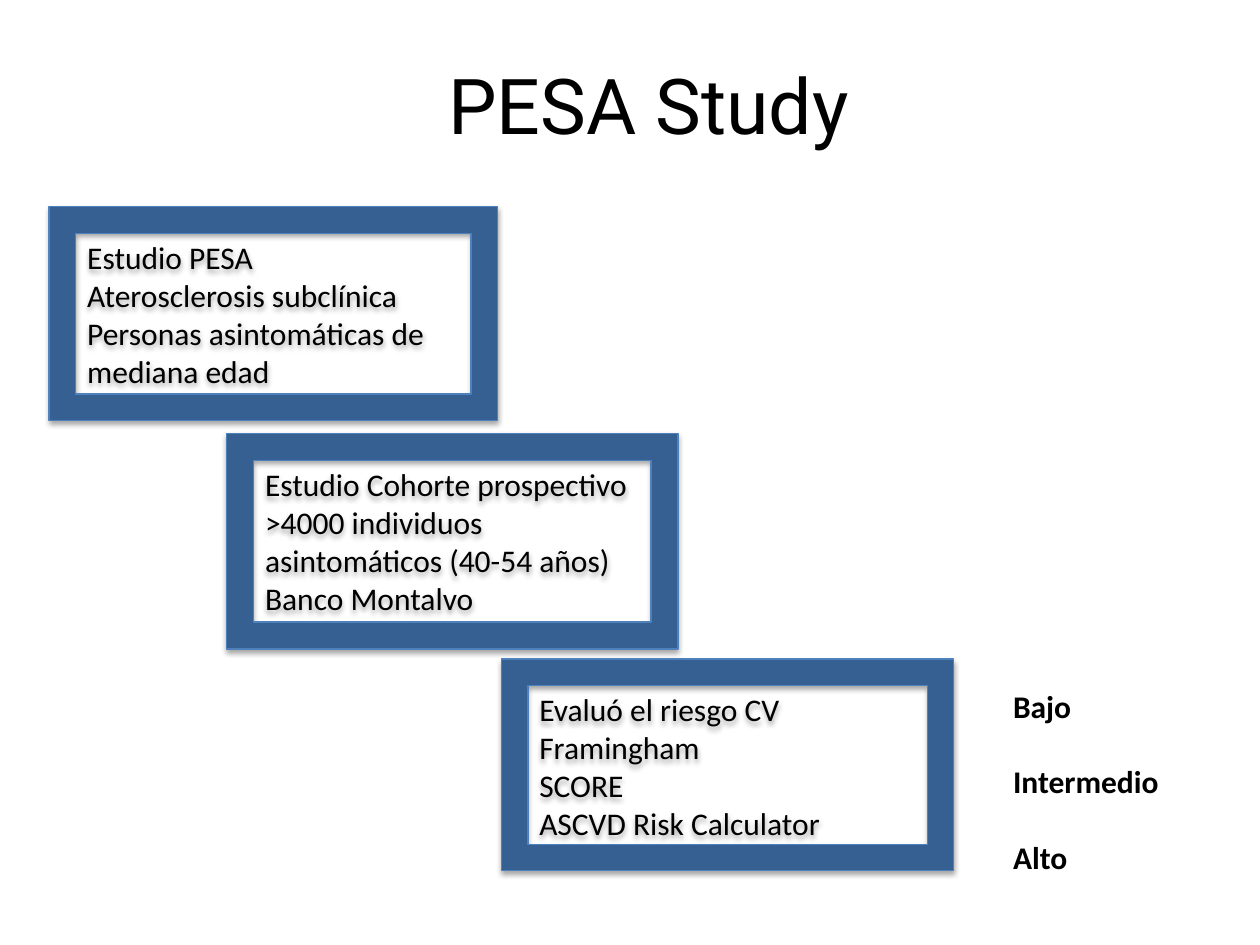
from lxml.etree import SubElement
from pptx import Presentation
from pptx.dml.color import RGBColor
from pptx.enum.shapes import MSO_SHAPE
from pptx.enum.text import MSO_ANCHOR, PP_ALIGN
from pptx.oxml.ns import qn
from pptx.util import Inches, Pt

BLACK = RGBColor(0x00, 0x00, 0x00)
FRAME_BLUE = RGBColor(0x37, 0x60, 0x92)
EDGE_BLUE = RGBColor(0x4F, 0x81, 0xBD)

presentation = Presentation()
presentation.slide_width = Inches(10)
presentation.slide_height = Inches(7.5)
COLUMN = presentation.slide_width / 100
ROW = presentation.slide_height / 75
slide = presentation.slides.add_slide(presentation.slide_layouts[6])

BODY_FONT = {"name": "Calibri", "size": Pt(18)}
BODY_FRAME = {
    "word_wrap": True,
    "vertical_anchor": MSO_ANCHOR.TOP,
    "margin_left": Inches(0.09),
    "margin_right": Inches(0.09),
    "margin_top": Inches(0.04),
    "margin_bottom": Inches(0.04),
}


def place(left, top, width, height):
    return int(left * COLUMN), int(top * ROW), int(width * COLUMN), int(height * ROW)


def write(shape, lines, frame_format, font_format, alignment=PP_ALIGN.LEFT, gap=0):
    text_frame = shape.text_frame
    for name, value in frame_format.items():
        setattr(text_frame, name, value)
    text_frame.text = "\n".join(lines)
    for index, paragraph in enumerate(text_frame.paragraphs):
        paragraph.alignment = alignment
        paragraph.space_before = Pt(gap if index else 0)
        font = paragraph.runs[0].font
        font.color.rgb = BLACK
        for name, value in font_format.items():
            setattr(font, name, value)


title = slide.shapes.add_textbox(*place(10.6, 2.7, 81.8, 11))
write(
    title,
    ["PESA Study"],
    {"word_wrap": True, "vertical_anchor": MSO_ANCHOR.MIDDLE},
    {"name": "Roboto", "size": Pt(44)},
    PP_ALIGN.CENTER,
)

steps = [
    (
        (3.9, 16.4, 35.6, 17),
        ["Estudio PESA", "Aterosclerosis subclínica", "Personas asintomáticas de mediana edad"],
    ),
    (
        (18, 34.4, 35.8, 17.1),
        ["Estudio Cohorte prospectivo", ">4000 individuos asintomáticos (40-54 años)", "Banco Montalvo"],
    ),
    (
        (39.8, 52.3, 35.9, 16.8),
        ["Evaluó el riesgo CV", "Framingham", "SCORE", "ASCVD Risk Calculator"],
    ),
]
for box, lines in steps:
    step = slide.shapes.add_shape(MSO_SHAPE.FRAME, *place(*box))
    step.fill.solid()
    step.fill.fore_color.rgb = FRAME_BLUE
    step.line.color.rgb = EDGE_BLUE
    step.line.width = Pt(0.75)
    step.shadow.inherit = False
    effects = step.element.spPr.find(qn("a:effectLst"))
    shadow = SubElement(
        effects,
        qn("a:outerShdw"),
        blurRad=str(Pt(3.1)),
        dist=str(Pt(1.8)),
        dir="5400000",
        rotWithShape="0",
    )
    shadow_color = SubElement(shadow, qn("a:srgbClr"), val=str(BLACK))
    SubElement(shadow_color, qn("a:alpha"), val="35000")
    write(step, lines, BODY_FRAME, BODY_FONT)

risk_levels = slide.shapes.add_textbox(*place(79.5, 54.1, 14.4, 16.1))
write(risk_levels, ["Bajo", "Intermedio", "Alto"], BODY_FRAME, {**BODY_FONT, "bold": True}, gap=21.6)

presentation.save("out.pptx")
